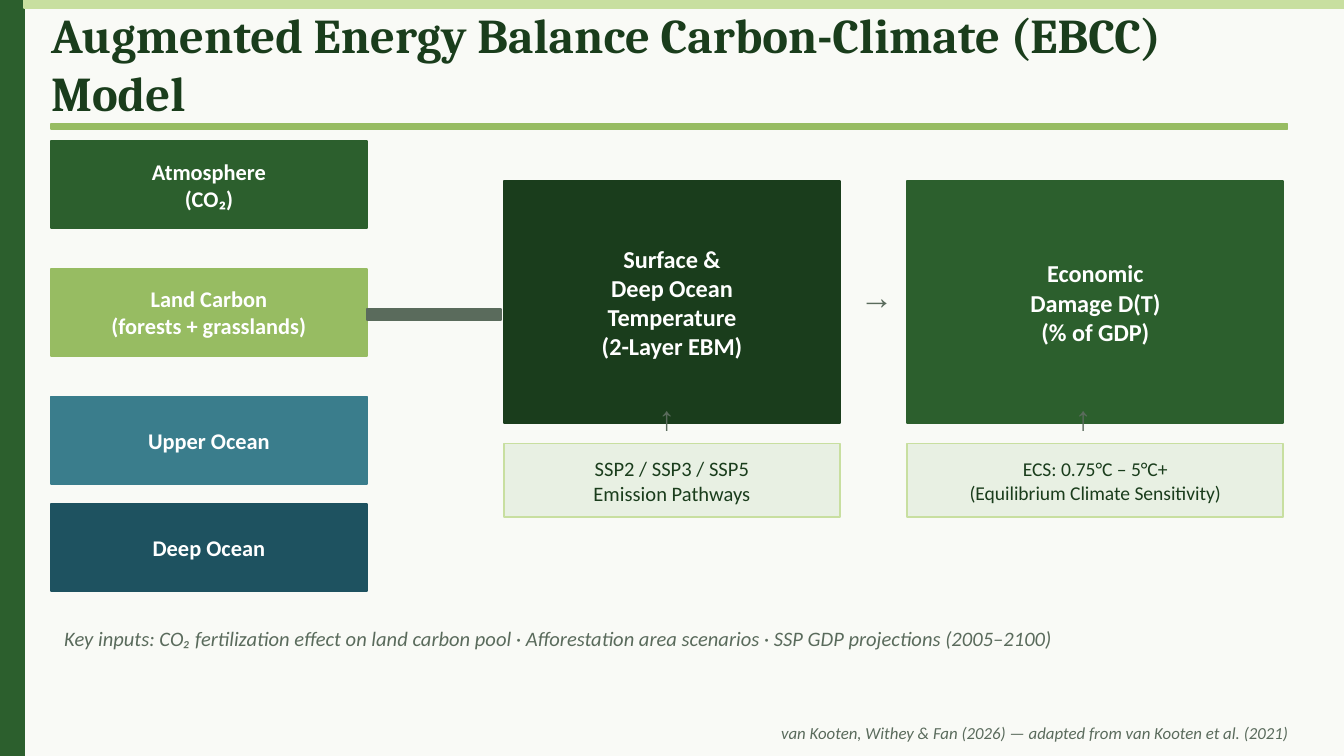
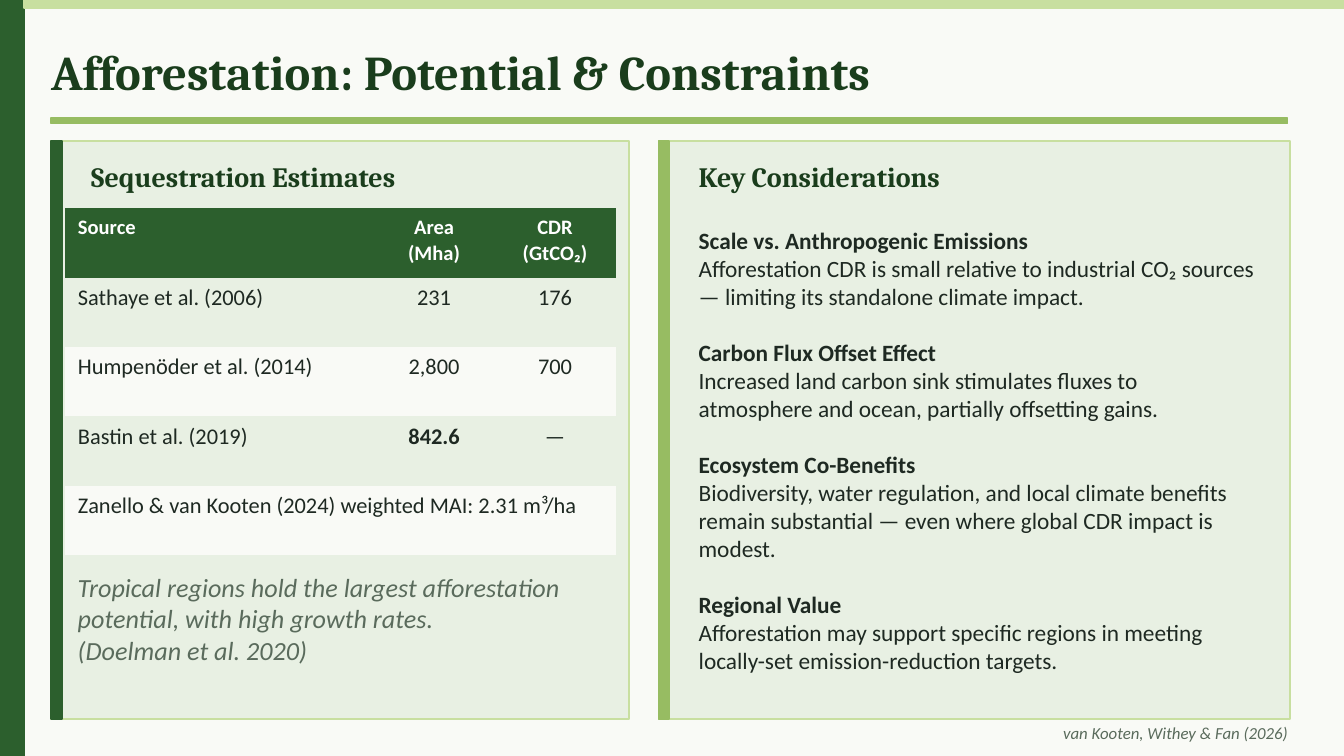
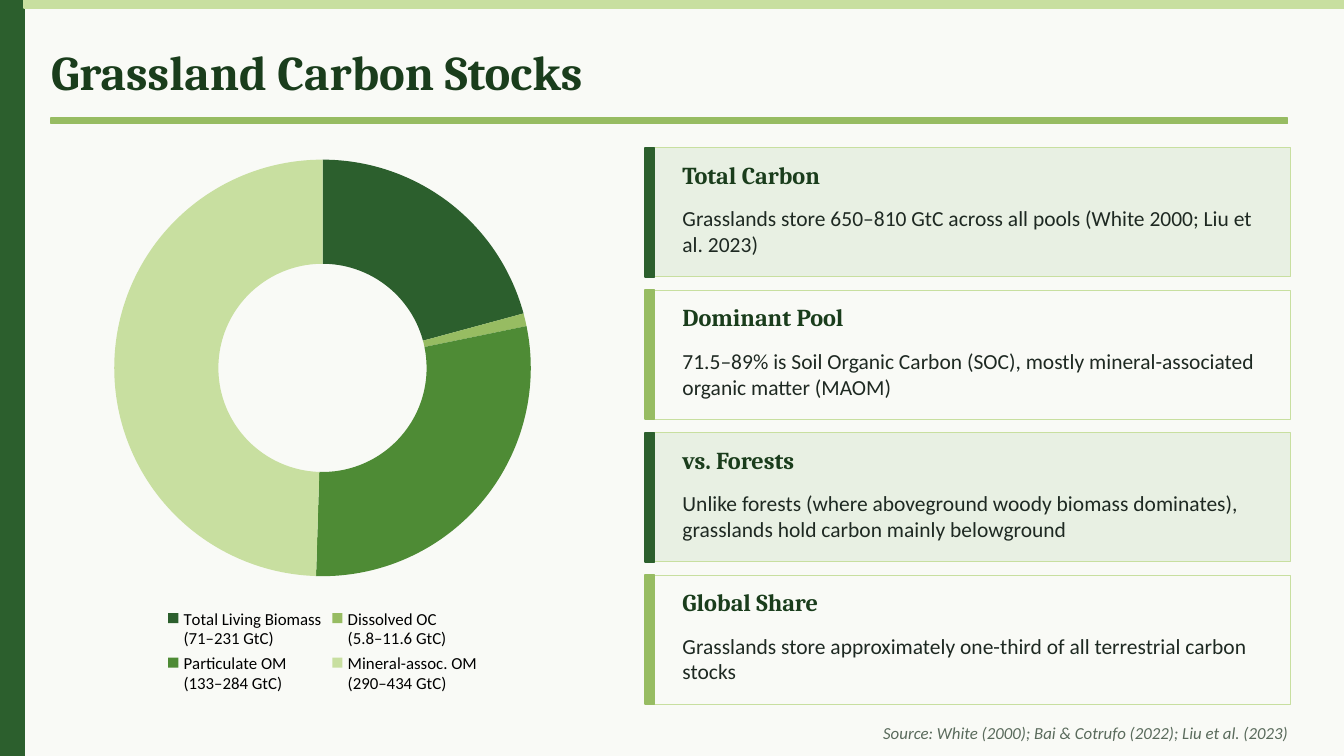
from dataclasses import dataclass, replace

import pptx
import pptx.chart.data
import pptx.dml.color
import pptx.enum.chart
import pptx.enum.shapes
import pptx.enum.text
import pptx.util

Pt = pptx.util.Pt
ALIGN = pptx.enum.text.PP_ALIGN
ANCHOR = pptx.enum.text.MSO_ANCHOR

# Colours
PAPER = "F9FAF6"
WHITE = "FFFFFF"
DARK = "1A3D1C"
FOREST = "2C5F2D"
LEAF = "97BC62"
PALE = "C8DFA0"
MIST = "E8F0E3"
INK = "1E2922"
MUTED = "5A6B5C"

# Page grid, in points
PAGE_WIDTH, PAGE_HEIGHT = 720, 405
SIDE_BAND, TOP_BAND = 12.96, 4.32
LEFT, CONTENT_WIDTH = 27.36, 662.4
NO_STYLE_TABLE = "{2D5ABB26-0587-4C30-8999-92F81FD0307C}"


@dataclass(frozen=True)
class Box:
    left: float
    top: float
    width: float
    height: float

    def lengths(self) -> tuple:
        return Pt(self.left), Pt(self.top), Pt(self.width), Pt(self.height)


@dataclass(frozen=True)
class Style:
    size: float
    color: str
    font: str = "Calibri"
    bold: bool = False
    italic: bool = False
    align: ALIGN = ALIGN.LEFT


@dataclass(frozen=True)
class Block:
    box: Box
    lines: list[str]
    fill: str
    style: Style
    line: str | None = None


@dataclass(frozen=True)
class Topic:
    heading: str
    body: str


TITLE = Style(26, DARK, "Cambria", bold=True)
PANEL_HEADING = Style(15, DARK, "Cambria", bold=True)
CARD_HEADING = replace(PANEL_HEADING, size=13)
CARD_BODY = Style(11.5, INK)
TOPIC_BODY = Style(12.5, INK)
FOOTER = Style(9, MUTED, italic=True, align=ALIGN.RIGHT)
KEY_INPUTS = Style(11, MUTED, italic=True)
POOL = Style(12, WHITE, bold=True, align=ALIGN.CENTER)
STAGE = replace(POOL, size=13)
DRIVER = Style(11, DARK, align=ALIGN.CENTER)
ARROW = Style(18, MUTED, "Arial")


def color(value: str) -> pptx.dml.color.RGBColor:
    return pptx.dml.color.RGBColor.from_string(value)


def write(paragraph, text: str, style: Style) -> None:
    paragraph.alignment = style.align
    run = paragraph.add_run()
    run.text = text
    run.font.name = style.font
    run.font.size = Pt(style.size)
    run.font.bold = style.bold
    run.font.italic = style.italic
    run.font.color.rgb = color(style.color)


def write_lines(frame, lines: list[tuple[str, Style]]) -> None:
    frame.word_wrap = True
    frame.vertical_anchor = ANCHOR.MIDDLE
    for index, (text, style) in enumerate(lines):
        paragraph = frame.add_paragraph() if index else frame.paragraphs[0]
        write(paragraph, text, style)


def add_rectangle(slide, box: Box, fill: str, line: str | None = None, line_width: float = 1):
    shape = slide.shapes.add_shape(pptx.enum.shapes.MSO_SHAPE.RECTANGLE, *box.lengths())
    shape.shadow.inherit = False
    shape.fill.solid()
    shape.fill.fore_color.rgb = color(fill)
    shape.line.color.rgb = color(line or fill)
    shape.line.width = Pt(line_width)
    return shape


def add_text(slide, box: Box, style: Style, *lines: str):
    frame = slide.shapes.add_textbox(*box.lengths()).text_frame
    write_lines(frame, [(line, style) for line in lines])
    return frame


def add_block(slide, block: Block) -> None:
    shape = add_rectangle(slide, block.box, block.fill, block.line)
    write_lines(shape.text_frame, [(line, block.style) for line in block.lines])


def add_panel(slide, box: Box, accent: str, accent_width: float, fill: str = MIST, line_width: float = 1) -> None:
    add_rectangle(slide, box, fill, PALE, line_width)
    add_rectangle(slide, replace(box, width=accent_width), accent)


def add_base_slide(presentation, title: str, footer: str, title_top: float = 12.96, rule_top: float = 63.36):
    slide = presentation.slides.add_slide(presentation.slide_layouts[6])
    slide.background.fill.solid()
    slide.background.fill.fore_color.rgb = color(PAPER)
    add_rectangle(slide, Box(0, 0, SIDE_BAND, PAGE_HEIGHT), FOREST)
    add_rectangle(slide, Box(SIDE_BAND, 0, PAGE_WIDTH - SIDE_BAND, TOP_BAND), PALE)
    frame = add_text(slide, Box(LEFT, title_top, CONTENT_WIDTH, 63.36 - title_top), TITLE, title)
    frame.margin_left = frame.margin_top = frame.margin_right = frame.margin_bottom = 0
    add_rectangle(slide, Box(LEFT, rule_top, CONTENT_WIDTH, 2.88), LEAF)
    add_text(slide, Box(LEFT, 385.2, 669.6, 14.4), FOOTER, footer)
    return slide


def build_model_slide(presentation) -> None:
    slide = add_base_slide(
        presentation,
        "Augmented Energy Balance Carbon-Climate (EBCC) Model",
        "van Kooten, Withey & Fan (2026) — adapted from van Kooten et al. (2021)",
        title_top=4.32,
        rule_top=66.24,
    )

    # Carbon pools
    pools = [
        (75.6, FOREST, ["Atmosphere", "(CO₂)"]),
        (144, LEAF, ["Land Carbon", "(forests + grasslands)"]),
        (212.4, "3A7D8C", ["Upper Ocean"]),
        (270, "1E5260", ["Deep Ocean"]),
    ]
    for top, fill, lines in pools:
        add_block(slide, Block(Box(LEFT, top, 169.2, 46.8), lines, fill, POOL))
    add_rectangle(slide, Box(196.56, 165.6, 72, 5.76), MUTED)

    # Model stages and the drivers below them
    temperature = Box(270, 97.2, 180, 129.6)
    damage = Box(486, 97.2, 201.6, 129.6)
    blocks = [
        Block(temperature, ["Surface &", "Deep Ocean", "Temperature", "(2-Layer EBM)"], DARK, STAGE),
        Block(damage, ["Economic", "Damage D(T)", "(% of GDP)"], FOREST, STAGE),
        Block(replace(temperature, top=237.6, height=39.6),
              ["SSP2 / SSP3 / SSP5", "Emission Pathways"], MIST, DRIVER, PALE),
        Block(replace(damage, top=237.6, height=39.6),
              ["ECS: 0.75°C – 5°C+", "(Equilibrium Climate Sensitivity)"],
              MIST, replace(DRIVER, size=10.5), PALE),
    ]
    for block in blocks:
        add_block(slide, block)

    # Flow arrows
    arrows = [("→", 237.6, 151.2), ("→", 453.6, 144), ("↑", 345.6, 208.8), ("↑", 568.8, 208.8)]
    for symbol, left, top in arrows:
        add_text(slide, Box(left, top, 28.8, 28.8), ARROW, symbol)

    add_text(
        slide, Box(LEFT, 331.2, CONTENT_WIDTH, 21.6), KEY_INPUTS,
        "Key inputs: CO₂ fertilization effect on land carbon pool · "
        "Afforestation area scenarios · SSP GDP projections (2005–2100)",
    )


def add_estimates_table(slide) -> None:
    rows = [
        ["Source", "Area (Mha)", "CDR (GtCO₂)"],
        ["Sathaye et al. (2006)", "231", "176"],
        ["Humpenöder et al. (2014)", "2,800", "700"],
        ["Bastin et al. (2019)", "842.6", "—"],
        ["Zanello & van Kooten (2024) weighted MAI: 2.31 m³/ha"],
    ]
    widths = [165.6, 64.8, 64.8]
    box = Box(34.56, 111.6, sum(widths), 37.15 * len(rows))
    table = slide.shapes.add_table(len(rows), len(widths), *box.lengths()).table
    table.first_row = table.horz_banding = False
    style_id = table._tbl.tblPr.find(pptx.oxml.ns.qn("a:tableStyleId"))
    style_id.text = NO_STYLE_TABLE
    for column, width in zip(table.columns, widths):
        column.width = Pt(width)

    for row_index, row in enumerate(rows):
        is_header = row_index == 0
        fill = FOREST if is_header else MIST if row_index % 2 else PAPER
        for column_index in range(len(widths)):
            cell = table.cell(row_index, column_index)
            cell.fill.solid()
            cell.fill.fore_color.rgb = color(fill)
        for column_index, text in enumerate(row):
            style = Style(
                11 if is_header else 12,
                WHITE if is_header else INK,
                bold=is_header or text == "842.6",
                align=ALIGN.CENTER if column_index else ALIGN.LEFT,
            )
            write(table.cell(row_index, column_index).text_frame.paragraphs[0], text, style)
    last = len(rows) - 1
    table.cell(last, 0).merge(table.cell(last, len(widths) - 1))


def build_afforestation_slide(presentation) -> None:
    slide = add_base_slide(
        presentation, "Afforestation: Potential & Constraints", "van Kooten, Withey & Fan (2026)"
    )
    panels = [
        (Box(LEFT, 75.6, 309.6, 309.6), FOREST, "Sequestration Estimates"),
        (Box(352.8, 75.6, 338.4, 309.6), LEAF, "Key Considerations"),
    ]
    for box, accent, heading in panels:
        add_panel(slide, box, accent, 5.76)
        add_text(slide, Box(box.left + 14.4, 80.64, 288, 27.36), PANEL_HEADING, heading)

    # Left panel
    add_estimates_table(slide)
    add_text(
        slide, Box(34.56, 306, 288, 50.4), replace(KEY_INPUTS, size=14),
        "Tropical regions hold the largest afforestation potential, with high growth rates.",
        "(Doelman et al. 2020)",
    )

    # Right panel
    topics = [
        Topic("Scale vs. Anthropogenic Emissions",
              "Afforestation CDR is small relative to industrial CO₂ sources "
              "— limiting its standalone climate impact."),
        Topic("Carbon Flux Offset Effect",
              "Increased land carbon sink stimulates fluxes to atmosphere and ocean, "
              "partially offsetting gains."),
        Topic("Ecosystem Co-Benefits",
              "Biodiversity, water regulation, and local climate benefits remain substantial "
              "— even where global CDR impact is modest."),
        Topic("Regional Value",
              "Afforestation may support specific regions in meeting locally-set "
              "emission-reduction targets."),
    ]
    frame = slide.shapes.add_textbox(*Box(367.2, 111.6, 313.2, 259.2).lengths()).text_frame
    lines = []
    for topic in topics:
        lines += [(topic.heading, replace(TOPIC_BODY, bold=True)), (topic.body, TOPIC_BODY)]
    write_lines(frame, lines)
    for paragraph in frame.paragraphs[2::2]:
        paragraph.space_before = Pt(15)


def add_stock_chart(slide) -> None:
    stocks = [
        ("Total Living Biomass\n(71–231 GtC)", 21, FOREST),
        ("Dissolved OC\n(5.8–11.6 GtC)", 1, LEAF),
        ("Particulate OM\n(133–284 GtC)", 29, "4E8B35"),
        ("Mineral-assoc. OM\n(290–434 GtC)", 50, PALE),
    ]
    data = pptx.chart.data.CategoryChartData()
    data.categories = [name for name, _, _ in stocks]
    data.add_series("Series 1", [value for _, value, _ in stocks])
    chart = slide.shapes.add_chart(
        pptx.enum.chart.XL_CHART_TYPE.DOUGHNUT, *Box(21.6, 75.6, 302.4, 298.8).lengths(), data
    ).chart
    chart.has_title = False
    chart.font.name = "Calibri"
    chart.font.size = Pt(10)
    chart.font.color.rgb = color("000000")
    chart.has_legend = True
    chart.legend.position = pptx.enum.chart.XL_LEGEND_POSITION.BOTTOM
    chart.legend.include_in_layout = False
    chart.legend.font.name = "Calibri"
    chart.legend.font.size = Pt(9)

    plot = chart.plots[0]
    plot.vary_by_categories = True
    plot.has_data_labels = False
    series = plot.series[0]
    series.format.line.color.rgb = color("F9F9F9")
    series.format.line.width = Pt(0.75)
    for index, (_, _, fill) in enumerate(stocks):
        point_fill = series.points[index].format.fill
        point_fill.solid()
        point_fill.fore_color.rgb = color(fill)


def build_grassland_slide(presentation) -> None:
    slide = add_base_slide(
        presentation, "Grassland Carbon Stocks",
        "Source: White (2000); Bai & Cotrufo (2022); Liu et al. (2023)",
    )
    add_stock_chart(slide)

    # Fact cards
    cards = [
        Topic("Total Carbon",
              "Grasslands store 650–810 GtC across all pools (White 2000; Liu et al. 2023)"),
        Topic("Dominant Pool",
              "71.5–89% is Soil Organic Carbon (SOC), mostly mineral-associated "
              "organic matter (MAOM)"),
        Topic("vs. Forests",
              "Unlike forests (where aboveground woody biomass dominates), "
              "grasslands hold carbon mainly belowground"),
        Topic("Global Share",
              "Grasslands store approximately one-third of all terrestrial carbon stocks"),
    ]
    for index, card in enumerate(cards):
        top = 79.2 + index * 76.32
        accent, fill = (LEAF, PAPER) if index % 2 else (FOREST, MIST)
        add_panel(slide, Box(345.6, top, 345.6, 69.12), accent, 5.04, fill, 0.5)
        add_text(slide, Box(358.56, top + 4.32, 324, 20.16), CARD_HEADING, card.heading)
        add_text(slide, Box(358.56, top + 24.48, 324, 40.32), CARD_BODY, card.body)


def main() -> None:
    presentation = pptx.Presentation()
    presentation.slide_width = Pt(PAGE_WIDTH)
    presentation.slide_height = Pt(PAGE_HEIGHT)
    build_model_slide(presentation)
    build_afforestation_slide(presentation)
    build_grassland_slide(presentation)
    presentation.save("out.pptx")


if __name__ == "__main__":
    main()
